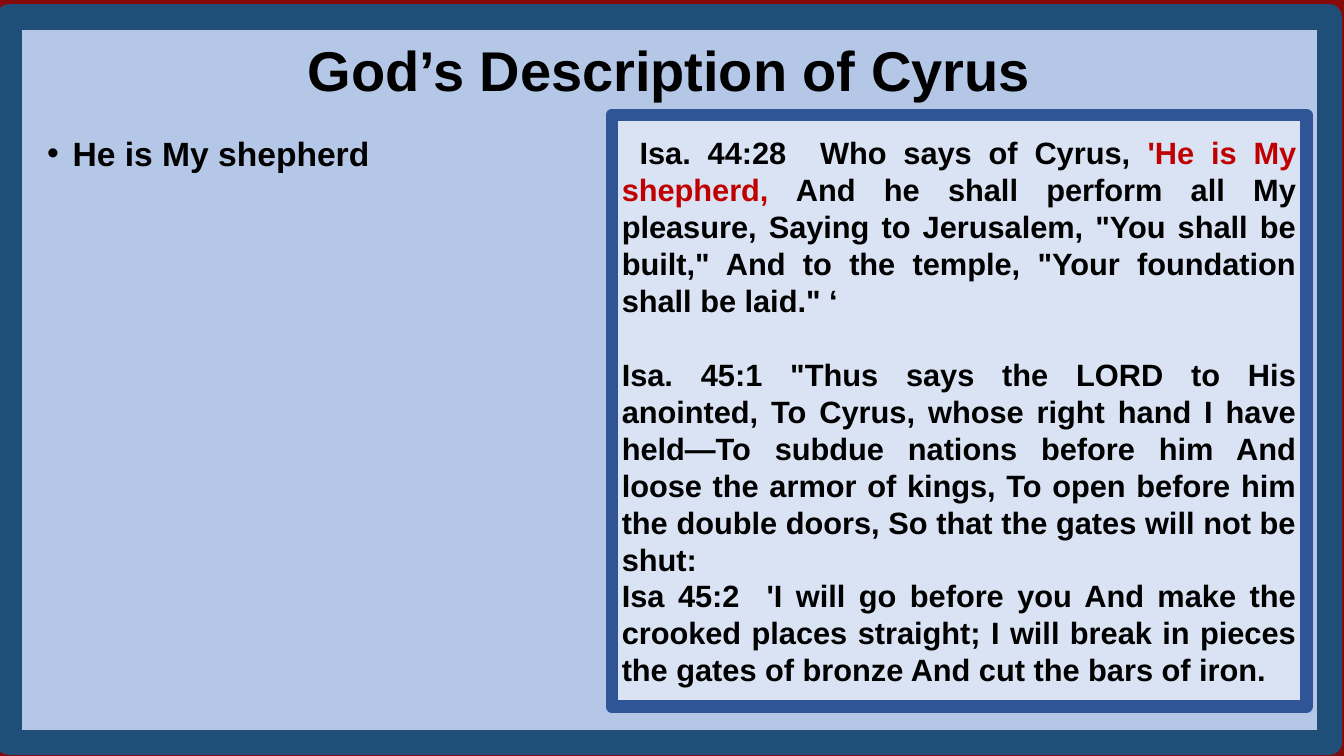
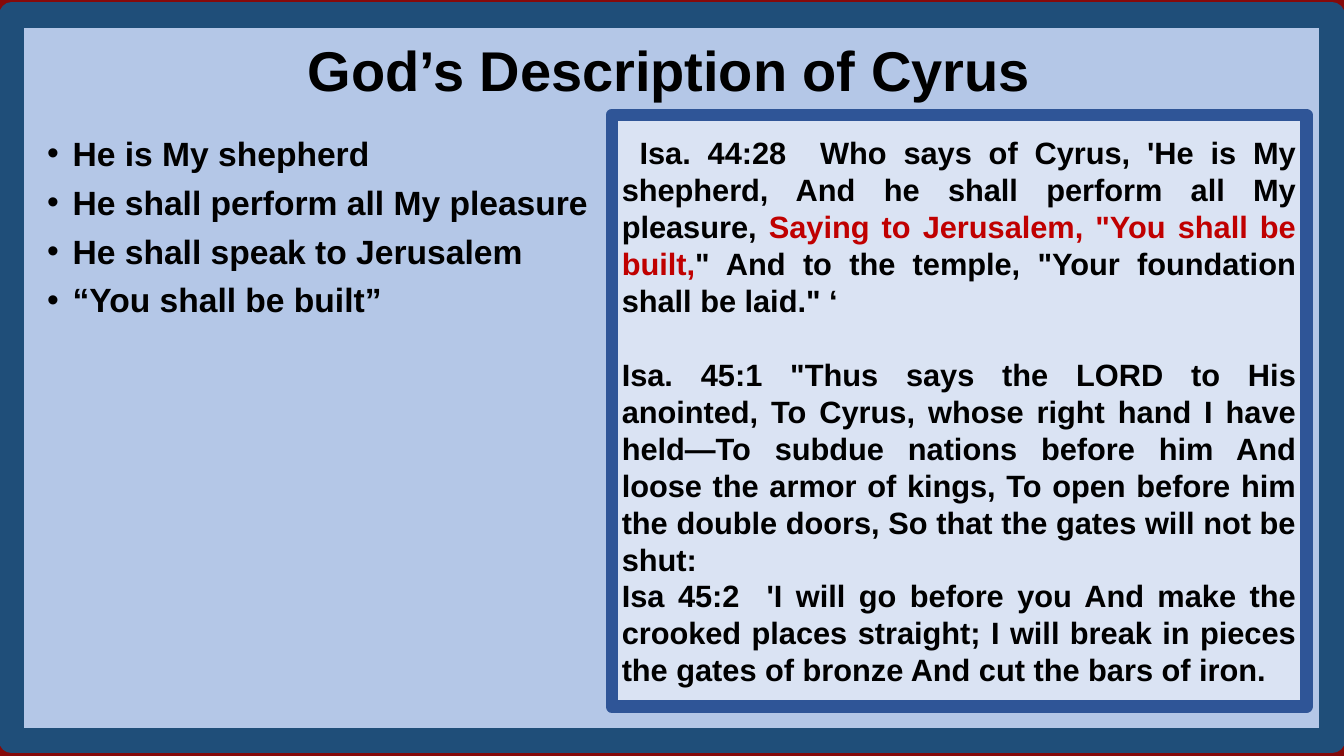
import pptx
import pptx.dml.color
import pptx.enum.shapes
import pptx.enum.text
import pptx.util
from lxml import etree
from pptx.util import Cm

FONT = "Arial"
BLACK = "000000"
BACKGROUND = "860A0A"
FRAME_FILL, FRAME_LINE = "B4C7E7", "1F4E79"
PANEL_FILL, PANEL_LINE = "DAE3F3", "2F5597"
HIGHLIGHT = "C00000"
ALIGN = pptx.enum.text.PP_ALIGN

# Boxes in centimetres: left, top, width, height
FRAME_SIZE = (33.27, 18.29)
TITLE_BOX = (0.66, 0.76, 32.39, 1.96)
POINTS_BOX = (0.94, 3.23, 14.43, 1.27)
PANEL_BOX = (15.42, 2.9, 17.5, 14.91)
POINT_STEP = 1.24

TITLE = "God’s Description of Cyrus"
VERSES = [
    "Isa. 44:28  Who says of Cyrus, 'He is My shepherd, And he shall perform "
    "all My pleasure, Saying to Jerusalem, \"You shall be built,\" And to the "
    "temple, \"Your foundation shall be laid.\" ‘",
    "Isa. 45:1 \"Thus says the LORD to His anointed, To Cyrus, whose right hand "
    "I have held—To subdue nations before him And loose the armor of kings, To "
    "open before him the double doors, So that the gates will not be shut:",
    "Isa 45:2  'I will go before you And make the crooked places straight; I "
    "will break in pieces the gates of bronze And cut the bars of iron.",
]
POINTS = [
    "He is My shepherd",
    "He shall perform all My pleasure",
    "He shall speak to Jerusalem",
    "“You shall be built”",
]
# Frame position, number of points shown, phrase in red
SLIDES = [
    ((0.23, 0.43), 1, "'He is My shepherd,"),
    ((0.3, 0.38), 4, "Saying to Jerusalem, \"You shall be built,"),
]


def color(hex_string):
    return pptx.dml.color.RGBColor.from_string(hex_string)


def style_font(font, size, hex_string=BLACK):
    font.name = FONT
    font.size = pptx.util.Pt(size)
    font.bold = True
    font.color.rgb = color(hex_string)


def add_rectangle(slide, box, fill, line, line_width):
    shape = slide.shapes.add_shape(
        pptx.enum.shapes.MSO_SHAPE.RECTANGLE, *map(Cm, box))
    shape.shadow.inherit = False
    shape.fill.solid()
    shape.fill.fore_color.rgb = color(fill)
    shape.line.color.rgb = color(line)
    shape.line.width = pptx.util.Pt(line_width)
    return shape


def add_text(slide, box, text):
    text_frame = slide.shapes.add_textbox(*map(Cm, box)).text_frame
    text_frame.word_wrap = True
    text_frame.text = text
    return text_frame


def add_bullet(paragraph):
    properties = paragraph._p.get_or_add_pPr()
    properties.set("marL", str(Cm(0.64)))
    properties.set("indent", str(-Cm(0.64)))
    for tag, attribute, value in (("buFont", "typeface", FONT),
                                  ("buChar", "char", "•")):
        element = etree.SubElement(properties, pptx.oxml.ns.qn("a:" + tag))
        element.set(attribute, value)


def add_title(slide, box):
    paragraph = add_text(slide, box, TITLE).paragraphs[0]
    paragraph.alignment = ALIGN.CENTER
    style_font(paragraph.runs[0].font, 40)


def add_points(slide, box, points):
    left, top, width, height = box
    height += POINT_STEP * (len(points) - 1)
    text_frame = add_text(slide, (left, top, width, height), "\n".join(points))
    for paragraph in text_frame.paragraphs:
        add_bullet(paragraph)
        paragraph.space_after = pptx.util.Pt(6)
        style_font(paragraph.runs[0].font, 24)


def add_verses(slide, box, phrase):
    text_frame = add_rectangle(slide, box, PANEL_FILL, PANEL_LINE, 9).text_frame
    text_frame.word_wrap = True
    text_frame.vertical_anchor = pptx.enum.text.MSO_ANCHOR.MIDDLE
    text_frame.text = "\n".join(VERSES)
    for paragraph in text_frame.paragraphs:
        paragraph.alignment = ALIGN.JUSTIFY
        # Split the verse around the phrase in red
        parts = [part for part in paragraph.text.partition(phrase) if part]
        paragraph.text = parts[0]
        for part in parts[1:]:
            paragraph.add_run().text = part
        for run in paragraph.runs:
            style_font(run.font, 22, HIGHLIGHT if run.text == phrase else BLACK)
    first, second = text_frame.paragraphs[:2]
    first._p.get_or_add_pPr().set("indent", str(Cm(0.45)))
    second.space_before = pptx.util.Pt(26.4)


def add_description_slide(presentation, frame_position, point_count, phrase):
    slide = presentation.slides.add_slide(presentation.slide_layouts[6])
    slide.background.fill.solid()
    slide.background.fill.fore_color.rgb = color(BACKGROUND)
    add_rectangle(slide, frame_position + FRAME_SIZE, FRAME_FILL, FRAME_LINE, 18)
    add_verses(slide, PANEL_BOX, phrase)
    add_points(slide, POINTS_BOX, POINTS[:point_count])
    add_title(slide, TITLE_BOX)


def main():
    presentation = pptx.Presentation()
    presentation.slide_width = Cm(33.87)
    presentation.slide_height = Cm(19.05)
    for frame_position, point_count, phrase in SLIDES:
        add_description_slide(presentation, frame_position, point_count, phrase)
    presentation.save("out.pptx")


if __name__ == "__main__":
    main()
